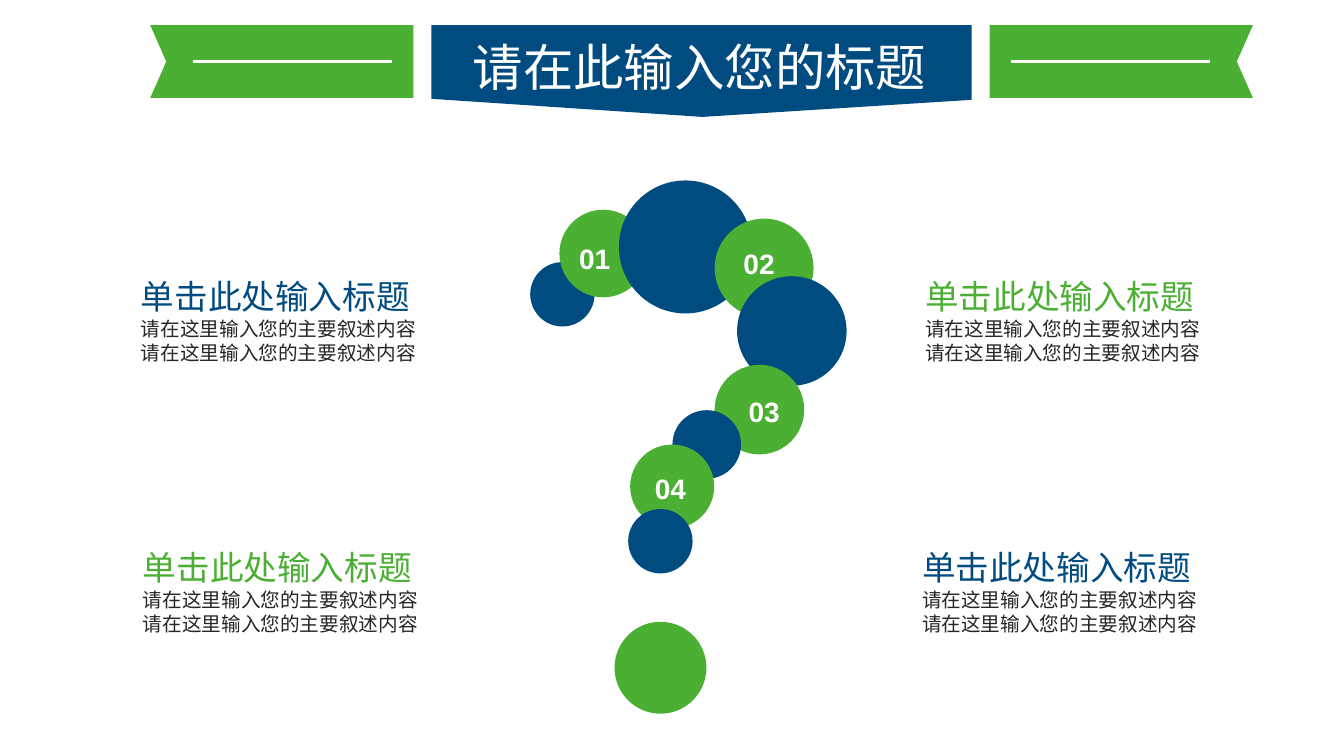
from dataclasses import dataclass

import pptx
import pptx.dml.color
import pptx.enum.shapes
import pptx.enum.text
import pptx.oxml
import pptx.oxml.ns
import pptx.slide
import pptx.text.text
import pptx.util

Pt = pptx.util.Pt

COLORS = {"blue": "004C80", "green": "4BAF33", "white": "FFFFFF", "ink": "262626"}
CJK = "Noto Sans CJK SC"
LINE_RATIO = 1.22
HEADING = "单击此处输入标题"
DETAIL = "请在这里输入您的主要叙述内容"


@dataclass(frozen=True)
class Panel:
    color: str
    points: tuple[tuple[float, float], ...]


@dataclass(frozen=True)
class Circle:
    left: float
    top: float
    size: float


@dataclass(frozen=True)
class Number:
    text: str
    left: float
    top: float


@dataclass(frozen=True)
class Entry:
    left: float
    top: float
    color: str


PANELS = [
    Panel("blue", ((308.2, 18), (694.1, 18), (694.1, 71.3), (501.8, 83.5), (308.2, 70.6))),
    Panel("green", ((707, 18), (895, 18), (883.5, 44), (895, 70), (707, 70))),
    Panel("green", ((295.2, 18), (107.3, 18), (118.8, 44), (107.3, 70), (295.2, 70))),
]
RULES = [(864, 722.2), (138.2, 280)]
CIRCLES = [
    Circle(378.7, 187.2, 46),
    Circle(399.6, 149.8, 62.6),
    Circle(442.1, 128.9, 95),
    Circle(510.5, 156.2, 70.6),
    Circle(526.5, 197.3, 78.2),
    Circle(510.5, 260.6, 64),
    Circle(480.3, 293, 49),
    Circle(450.1, 317.5, 60),
    Circle(448.7, 363.6, 46),
    Circle(439, 444.2, 65.6),
]
NUMBERS = [
    Number("01", 393.1, 167),
    Number("02", 510.5, 170.6),
    Number("03", 514.1, 276.5),
    Number("04", 447.1, 331.2),
]
ENTRIES = [
    Entry(93.6, 191.5, "blue"),
    Entry(651.6, 385.2, "blue"),
    Entry(95, 385.2, "green"),
    Entry(653.8, 191.5, "green"),
]


def rgb(color: str) -> pptx.dml.color.RGBColor:
    return pptx.dml.color.RGBColor.from_string(COLORS[color])


def paint(shape, color: str) -> None:
    shape.shadow.inherit = False
    shape.fill.solid()
    shape.fill.fore_color.rgb = rgb(color)
    shape.line.fill.background()


def draw_panel(slide: pptx.slide.Slide, panel: Panel) -> None:
    corners = [(Pt(x), Pt(y)) for x, y in panel.points]
    builder = slide.shapes.build_freeform(*corners[0], scale=1.0)
    builder.add_line_segments(corners[1:], close=True)
    paint(builder.convert_to_shape(), panel.color)


def draw_rule(slide: pptx.slide.Slide, start: float, end: float) -> None:
    rule = slide.shapes.add_connector(
        pptx.enum.shapes.MSO_CONNECTOR.STRAIGHT, Pt(start), Pt(44), Pt(end), Pt(44)
    )
    rule.line.color.rgb = rgb("white")
    rule.line.width = Pt(1.75)
    pptx.oxml.ns.qn("a:effectLst")
    rule._element.spPr.append(
        pptx.oxml.parse_xml(f"<a:effectLst {pptx.oxml.ns.nsdecls('a')}/>")
    )


def draw_circle(slide: pptx.slide.Slide, circle: Circle, color: str) -> None:
    disc = slide.shapes.add_shape(
        pptx.enum.shapes.MSO_SHAPE.OVAL,
        Pt(circle.left), Pt(circle.top), Pt(circle.size), Pt(circle.size),
    )
    paint(disc, color)


def add_text_frame(
    slide: pptx.slide.Slide, left: float, top: float, width: float, height: float
) -> pptx.text.text.TextFrame:
    frame = slide.shapes.add_textbox(Pt(left), Pt(top), Pt(width), Pt(height)).text_frame
    frame.word_wrap = True
    return frame


def style(paragraph, text: str, size: float, color: str, face: str = CJK) -> None:
    paragraph.text = text
    paragraph.font.size = Pt(size)
    paragraph.font.name = face
    paragraph.font.color.rgb = rgb(color)
    if face == CJK:
        paragraph.line_spacing = Pt(round(size * LINE_RATIO, 1))
        defaults = paragraph._p.pPr.find(pptx.oxml.ns.qn("a:defRPr"))
        defaults.append(
            pptx.oxml.parse_xml(f'<a:ea {pptx.oxml.ns.nsdecls("a")} typeface="{face}"/>')
        )


def draw_title(slide: pptx.slide.Slide) -> None:
    frame = add_text_frame(slide, 330.5, 19.4, 342, 51.1)
    frame.margin_top = Pt(6)
    style(frame.paragraphs[0], "请在此输入您的标题", 36, "white")


def draw_number(slide: pptx.slide.Slide, number: Number) -> None:
    frame = add_text_frame(slide, number.left, number.top, 63.4, 34.6)
    frame.vertical_anchor = pptx.enum.text.MSO_ANCHOR.MIDDLE
    label = frame.paragraphs[0]
    style(label, number.text, 20, "white", "Arial")
    label.font.bold = True
    label.alignment = pptx.enum.text.PP_ALIGN.CENTER


def draw_entry(slide: pptx.slide.Slide, entry: Entry) -> None:
    frame = add_text_frame(slide, entry.left, entry.top, 213, 113.8)
    frame.margin_top = Pt(5.2)
    style(frame.paragraphs[0], HEADING, 24, entry.color)
    for _ in range(2):
        style(frame.add_paragraph(), DETAIL, 14, "ink")


def main() -> None:
    deck = pptx.Presentation()
    deck.slide_width, deck.slide_height = Pt(960), Pt(540)
    slide = deck.slides.add_slide(deck.slide_layouts[6])
    for panel in PANELS:
        draw_panel(slide, panel)
    for start, end in RULES:
        draw_rule(slide, start, end)
    draw_title(slide)
    for position, circle in enumerate(CIRCLES):
        draw_circle(slide, circle, ("blue", "green")[position % 2])
    for number in NUMBERS:
        draw_number(slide, number)
    for entry in ENTRIES:
        draw_entry(slide, entry)
    deck.save("out.pptx")


if __name__ == "__main__":
    main()
